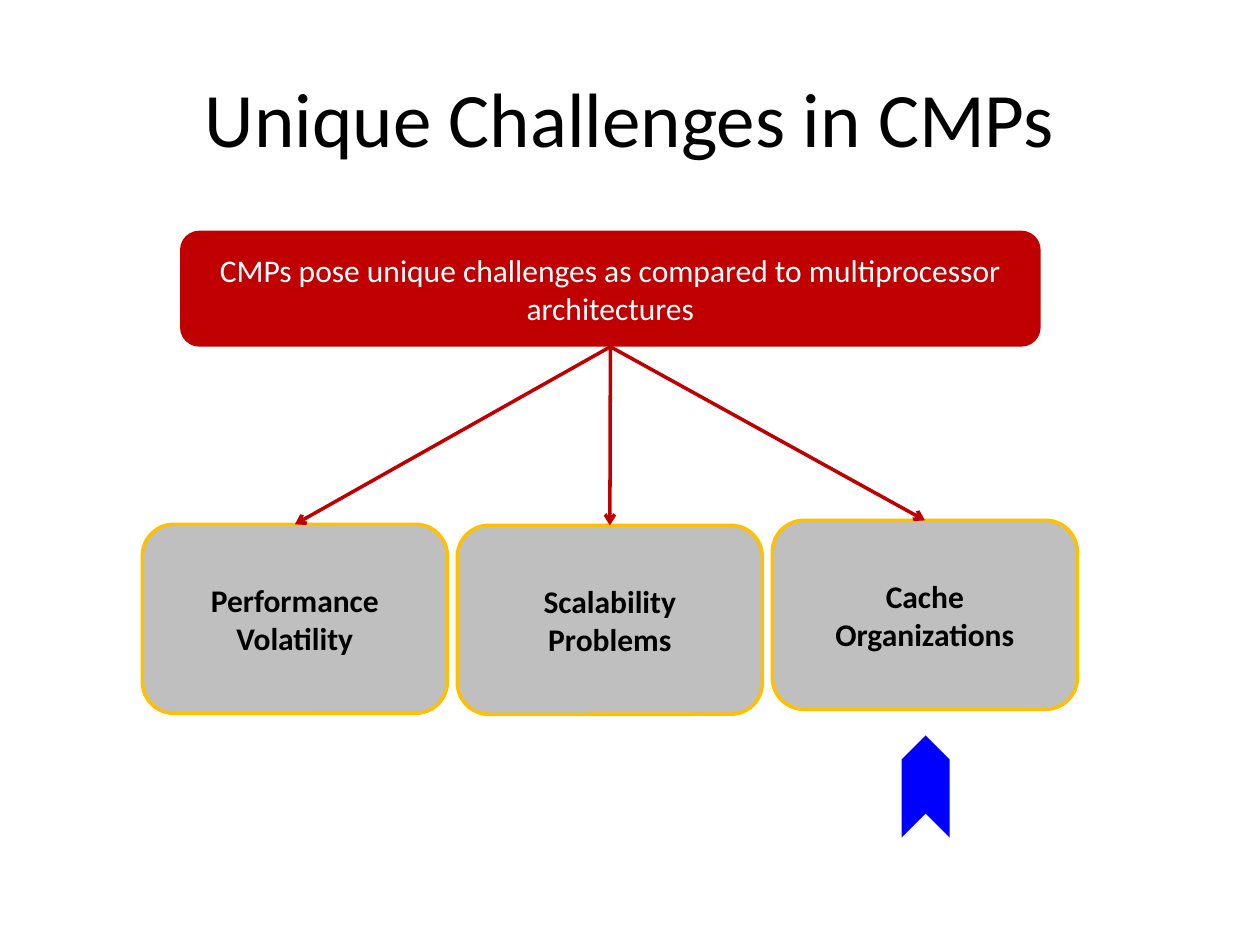
from dataclasses import dataclass

from lxml import etree
from pptx import Presentation
from pptx.dml.color import RGBColor
from pptx.enum.shapes import MSO_CONNECTOR, MSO_SHAPE
from pptx.enum.text import MSO_ANCHOR, PP_ALIGN
from pptx.oxml.ns import qn
from pptx.shapes.autoshape import Shape
from pptx.slide import Slide
from pptx.util import Cm, Pt

ROUNDED = MSO_SHAPE.ROUNDED_RECTANGLE
CHEVRON = MSO_SHAPE.CHEVRON
STRAIGHT = MSO_CONNECTOR.STRAIGHT
MIDDLE = MSO_ANCHOR.MIDDLE
CENTER = PP_ALIGN.CENTER

RED = RGBColor(0xC0, 0x00, 0x00)
GREY = RGBColor(0xBF, 0xBF, 0xBF)
GOLD = RGBColor(0xFF, 0xC0, 0x00)
BLUE = RGBColor(0x00, 0x00, 0xFF)
BLACK = RGBColor(0x00, 0x00, 0x00)
WHITE = RGBColor(0xFF, 0xFF, 0xFF)

FONT = "Calibri"
LINE_WIDTH = Pt(2)
TOP_SITE, BOTTOM_SITE = 0, 2

CHALLENGE_LEFT = 2.87
CHALLENGE_PITCH = 6.35
CHALLENGE_WIDTH = 6.15
CHALLENGE_HEIGHT = 3.81


@dataclass(frozen=True)
class Box:
    """Place in centimetres and look of a rounded box."""
    text: str
    left: float
    top: float
    width: float
    height: float
    fill: RGBColor
    ink: RGBColor
    outline: RGBColor | None = None
    bold: bool = False


@dataclass(frozen=True)
class Challenge:
    text: str
    top: float


CHALLENGES = (
    Challenge("Performance Volatility", 10.57),
    Challenge("Scalability Problems", 10.59),
    Challenge("Cache Organizations", 10.49),
)


def write_centred(shape: Shape, text: str, size: int, color: RGBColor,
                  bold: bool = False) -> None:
    frame = shape.text_frame
    frame.word_wrap = True
    frame.vertical_anchor = MIDDLE
    paragraph = frame.paragraphs[0]
    paragraph.alignment = CENTER
    run = paragraph.add_run()
    run.text = text
    run.font.name = FONT
    run.font.size = Pt(size)
    run.font.bold = bold
    run.font.color.rgb = color


def fill_flat(shape: Shape, fill: RGBColor, outline: RGBColor | None = None) -> None:
    """Give a solid fill, no shadow, and a line only where one is named."""
    shape.shadow.inherit = False
    shape.fill.solid()
    shape.fill.fore_color.rgb = fill
    if outline is None:
        shape.line.fill.background()
    else:
        shape.line.color.rgb = outline
        shape.line.width = LINE_WIDTH


def draw_box(slide: Slide, box: Box) -> Shape:
    shape = slide.shapes.add_shape(
        ROUNDED, Cm(box.left), Cm(box.top), Cm(box.width), Cm(box.height))
    fill_flat(shape, box.fill, box.outline)
    write_centred(shape, box.text, 18, box.ink, box.bold)
    return shape


def draw_arrow(slide: Slide, source: Shape, target: Shape) -> None:
    """Run an arrow from the bottom of one box to the top of another."""
    arrow = slide.shapes.add_connector(STRAIGHT, 0, 0, 0, 0)
    arrow.begin_connect(source, BOTTOM_SITE)
    arrow.end_connect(target, TOP_SITE)
    arrow.line.color.rgb = RED
    arrow.line.width = LINE_WIDTH
    etree.SubElement(arrow.line._get_or_add_ln(), qn("a:tailEnd"), type="arrow")
    etree.SubElement(arrow._element.spPr, qn("a:effectLst"))


def draw_pointer(slide: Slide) -> None:
    pointer = slide.shapes.add_shape(
        CHEVRON, Cm(17.63), Cm(15.37), Cm(2.06), Cm(0.97))
    pointer.rotation = 270
    fill_flat(pointer, BLUE)


def main() -> None:
    deck = Presentation()
    deck.slide_width, deck.slide_height = Cm(25.4), Cm(19.05)
    slide = deck.slides.add_slide(deck.slide_layouts.get_by_name("Title Only"))

    title = slide.shapes.title
    title.left, title.top = Cm(1.27), Cm(0.76)
    title.width, title.height = Cm(22.86), Cm(3.18)
    write_centred(title, "Unique Challenges in CMPs", 44, BLACK)

    claim = draw_box(slide, Box(
        "CMPs pose unique challenges as compared to multiprocessor architectures",
        3.63, 4.65, 17.35, 2.34, RED, WHITE))
    for column, challenge in enumerate(CHALLENGES):
        challenge_box = draw_box(slide, Box(
            challenge.text, CHALLENGE_LEFT + column * CHALLENGE_PITCH, challenge.top,
            CHALLENGE_WIDTH, CHALLENGE_HEIGHT, GREY, BLACK, GOLD, bold=True))
        draw_arrow(slide, claim, challenge_box)
    draw_pointer(slide)

    deck.save("out.pptx")


if __name__ == "__main__":
    main()
